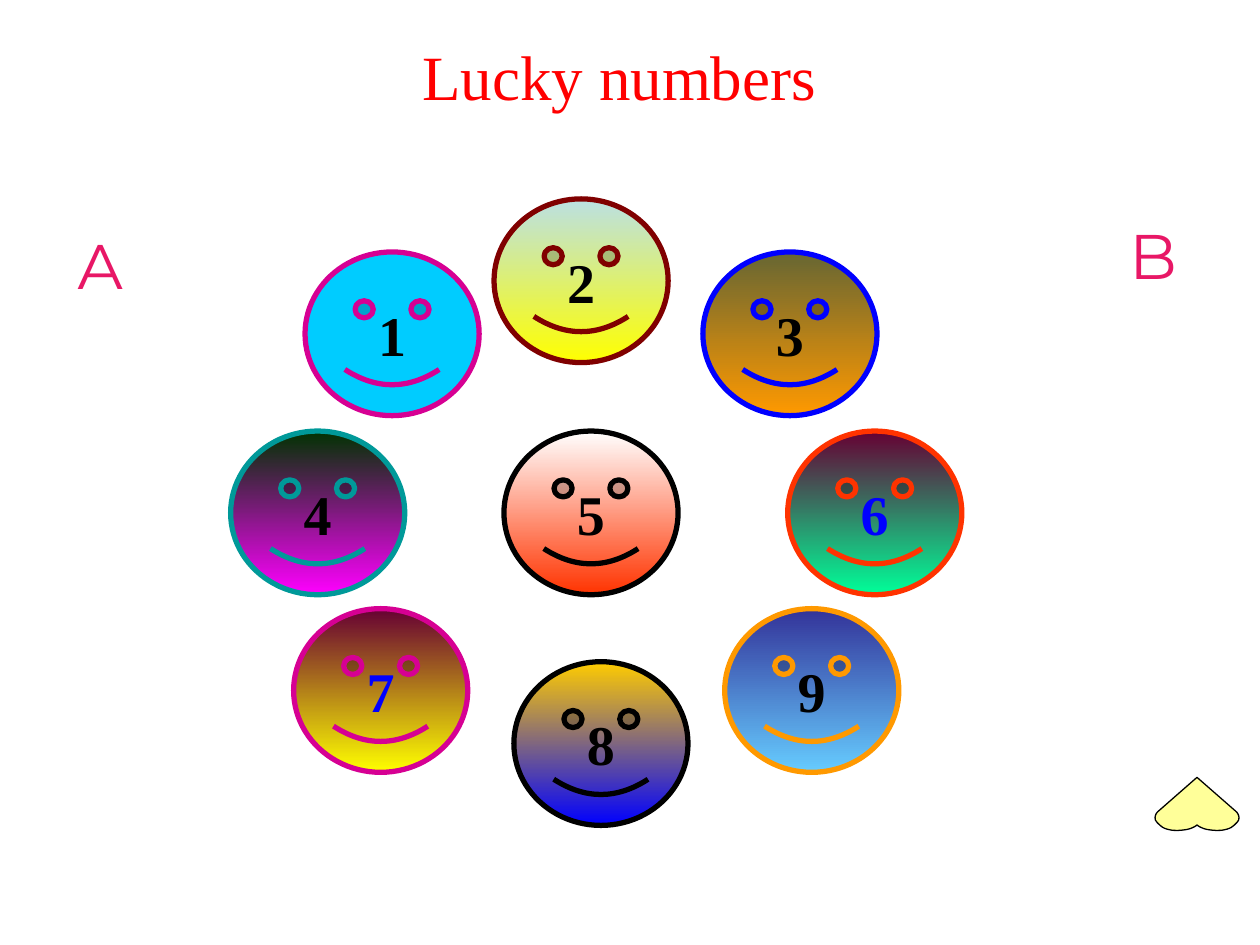
from lxml.etree import SubElement
from pptx import Presentation
from pptx.dml.color import RGBColor as Rgb
from pptx.enum.shapes import MSO_SHAPE as Preset
from pptx.enum.text import MSO_ANCHOR as Anchor, PP_ALIGN as Align
from pptx.oxml import parse_xml
from pptx.oxml.ns import nsdecls, qn
from pptx.util import Cm, Pt

COLORS = {
    "black": "000000", "white": "FFFFFF", "red": "FF0000", "blue": "0000FF",
    "yellow": "FFFF00", "magenta": "FF00FF", "pink": "D60093", "sky": "00CCFF",
    "pale teal": "BBE0E3", "maroon": "800000", "olive": "666633",
    "orange": "FF9900", "forest": "003300", "teal": "009999",
    "vermilion": "FF3300", "wine": "660033", "mint": "00FF99",
    "gold": "FFCC00", "indigo": "333399", "light blue": "66CCFF",
    "cream": "FFFF99", "silver": "EAEAEA", "violet": "A603AB",
    "rose": "E81766", "coral": "EE3F17", "green": "1A8D48", "cobalt": "0819FB",
}

# Rainbow of the team letters: position in percent, colour
RAINBOW = [(0, "violet"), (12, "rose"), (27, "coral"), (48, "yellow"),
           (65, "green"), (79, "cobalt"), (100, "violet")]

# Number, left, top, gradient top, gradient bottom, outline, number colour
FACES = [
    (1, 6.15, 5.08, "sky", "sky", "pink", "black"),
    (2, 9.96, 4.01, "pale teal", "yellow", "maroon", "black"),
    (3, 14.17, 5.08, "olive", "orange", "blue", "black"),
    (4, 4.65, 8.69, "forest", "magenta", "teal", "black"),
    (5, 10.16, 8.69, "white", "vermilion", "black", "black"),
    (6, 15.88, 8.69, "wine", "mint", "vermilion", "blue"),
    (7, 5.92, 12.27, "wine", "yellow", "pink", "blue"),
    (8, 10.36, 13.34, "gold", "blue", "black", "black"),
    (9, 14.61, 12.27, "indigo", "light blue", "orange", "black"),
]

# Right half of the heart from its notch: two control points and an end per curve
HEART_NOTCH = (0, 0.11)
HEART_TIP = (0, 1.07)
HEART_CURVES = [
    ((0.03, 0.08), (0.1, 0.05), (0.16, 0.03)),
    ((0.24, 0.01), (0.33, 0), (0.42, 0)),
    ((0.52, 0), (0.61, 0.02), (0.69, 0.06)),
    ((0.76, 0.11), (0.81, 0.16), (0.84, 0.21)),
    ((0.85, 0.26), (0.85, 0.31), (0.8, 0.37)),
]


def rgb(name):
    return Rgb.from_string(COLORS[name])


def curve_points(start, first, second, end, steps=6):
    """Points along a cubic curve, without its start."""
    for step in range(1, steps + 1):
        t = step / steps
        weights = ((1 - t) ** 3, 3 * t * (1 - t) ** 2, 3 * t * t * (1 - t), t ** 3)
        corners = (start, first, second, end)
        yield tuple(sum(w * c[axis] for w, c in zip(weights, corners))
                    for axis in (0, 1))


class Board:
    """Slide with the style of the game."""
    serif = "Times New Roman"
    display = "Montserrat"
    face_size = (Cm(3.51), Cm(3.3))

    def __init__(self, slide):
        self.slide = slide

    def label(self, shape, text, size, font, bold=None):
        frame = shape.text_frame
        frame.text = text
        frame.word_wrap = False
        paragraph = frame.paragraphs[0]
        paragraph.alignment = Align.CENTER
        run = paragraph.runs[0]
        run.font.size, run.font.name, run.font.bold = Pt(size), font, bold
        return run

    def outline(self, shape, color, width):
        shape.shadow.inherit = False
        shape.line.color.rgb = rgb(color)
        shape.line.width = Pt(width)

    def face(self, number, left, top, upper, lower, edge, ink):
        face = self.slide.shapes.add_shape(
            Preset.SMILEY_FACE, Cm(left), Cm(top), *self.face_size)
        self.outline(face, edge, 3)
        if upper == lower:
            face.fill.solid()
            face.fill.fore_color.rgb = rgb(upper)
        else:
            face.fill.gradient()
            face.fill.gradient_angle = 270
            for stop, color in zip(face.fill.gradient_stops, (upper, lower)):
                stop.color.rgb = rgb(color)
        run = self.label(face, str(number), 32, self.serif, bold=True)
        run.font.color.rgb = rgb(ink)
        face.text_frame.vertical_anchor = Anchor.MIDDLE

    def word_art(self, text, box, font, fill, edge, edge_width):
        """Outlined 36 pt text; fill is a colour name or a list of stops."""
        art = self.slide.shapes.add_textbox(*map(Cm, box))
        run = self.label(art, text, 36, font)
        properties = run._r.get_or_add_rPr()
        if isinstance(fill, str):
            run.font.color.rgb = rgb(fill)
        else:
            gradient = parse_xml(f'<a:gradFill {nsdecls("a")}><a:gsLst/>'
                                 '<a:lin ang="0" scaled="1"/></a:gradFill>')
            for position, color in fill:
                stop = SubElement(gradient[0], qn("a:gs"), pos=str(position * 1000))
                SubElement(stop, qn("a:srgbClr"), val=COLORS[color])
            properties.insert(0, gradient)
        properties.insert(0, parse_xml(
            f'<a:ln {nsdecls("a")} w="{int(Pt(edge_width))}"><a:solidFill>'
            f'<a:srgbClr val="{COLORS[edge]}"/></a:solidFill></a:ln>'))

    def heart(self, center, top):
        """Heart standing on its lobes."""
        right, start = [], HEART_NOTCH
        for curve in HEART_CURVES:
            right.extend(curve_points(start, *curve))
            start = curve[-1]
        left = [(-x, y) for x, y in reversed(right)]
        builder = self.slide.shapes.build_freeform(*map(Cm, HEART_NOTCH))
        builder.add_line_segments(
            [(Cm(x), Cm(y)) for x, y in right + [HEART_TIP] + left], close=True)
        heart = builder.convert_to_shape(Cm(center), Cm(top))
        heart.rotation = 180
        heart.fill.solid()
        heart.fill.fore_color.rgb = rgb("cream")
        self.outline(heart, "black", 0.75)


def main():
    deck = Presentation()
    deck.slide_width, deck.slide_height = Cm(25.4), Cm(19.05)
    board = Board(deck.slides.add_slide(deck.slide_layouts[6]))

    # Numbered faces
    for face in FACES:
        board.face(*face)

    # Team letters
    for letter, box in (("A", (1.07, 4.45, 1.9, 1.8)),
                        ("B", (22.43, 4.24, 1.63, 1.8))):
        board.word_art(letter, box, board.display, RAINBOW, "silver", 1)

    # Title
    board.word_art("Lucky numbers", (6.35, 0.64, 12.27, 3.18),
                   board.serif, "red", "black", 0.75)

    # Heart in the corner
    board.heart(24.13, 15.67)

    deck.save("out.pptx")


if __name__ == "__main__":
    main()
